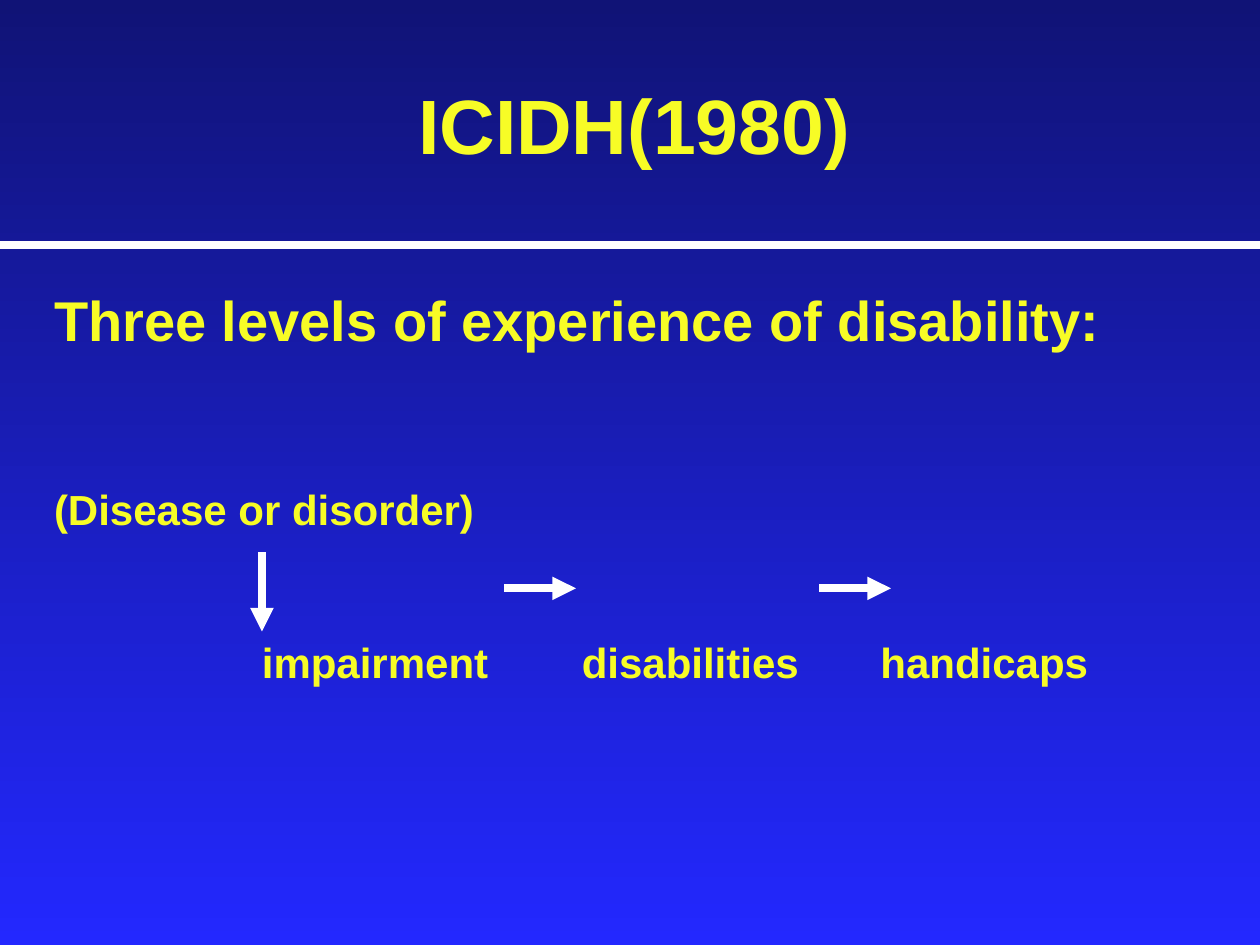
from collections import namedtuple

from lxml.etree import SubElement
from pptx import Presentation
from pptx.dml.color import RGBColor
from pptx.enum.shapes import MSO_CONNECTOR as Connector
from pptx.enum.text import MSO_ANCHOR as Anchor, PP_ALIGN as Align
from pptx.oxml.ns import qn
from pptx.util import Cm, Pt

NAVY = RGBColor(0x10, 0x13, 0x76)
BLUE = RGBColor(0x23, 0x28, 0xFF)
YELLOW = RGBColor(0xF7, 0xFC, 0x26)
WHITE = RGBColor(0xFF, 0xFF, 0xFF)
FONT = "Arial"

# Lengths in centimetres
Box = namedtuple("Box", "left top width height")
PAGE = Box(0, 0, 25.4, 19.05)
TITLE = Box(1.5, 0.9, 22.58, 3.18)
BODY = Box(0.84, 5.64, 24.56, 12.45)
RULE_TOP = 4.93


def paint_background(slide):
    fill = slide.background.fill
    fill.gradient()
    fill.gradient_angle = 270
    for stop, color, position in zip(fill.gradient_stops, (NAVY, BLUE), (0, 1)):
        stop.color.rgb = color
        stop.position = position


def add_frame(slide, box, anchor=Anchor.TOP):
    frame = slide.shapes.add_textbox(*map(Cm, box)).text_frame
    frame.word_wrap = True
    frame.vertical_anchor = anchor
    return frame


def write(para, text, size=24, align=Align.LEFT, before=0, tabs=()):
    if tabs:
        tab_list = SubElement(para._p.get_or_add_pPr(), qn("a:tabLst"))
        for position in tabs:
            SubElement(tab_list, qn("a:tab"), pos=str(Cm(position)), algn="l")
    para.alignment = align
    para.space_before = Pt(before)
    span = para.add_run()
    span.text = text
    font = span.font
    font.name, font.size, font.bold = FONT, Pt(size), True
    font.color.rgb = YELLOW


def add_line(slide, start, end, arrow=False):
    line = slide.shapes.add_connector(Connector.STRAIGHT, *map(Cm, start + end))
    line.line.color.rgb = WHITE
    line.line.width = Pt(4.5)
    if arrow:
        SubElement(line.line._get_or_add_ln(), qn("a:tailEnd"), type="triangle")
    SubElement(line._element.spPr, qn("a:effectLst"))


def add_title(slide, box):
    frame = add_frame(slide, box, Anchor.MIDDLE)
    write(frame.paragraphs[0], "ICIDH(1980)", size=44, align=Align.CENTER)


def add_levels(slide, box):
    # Heading, cause and the row of three levels
    frame = add_frame(slide, box)
    write(frame.paragraphs[0], "Three levels of experience of disability:", size=32)
    write(frame.add_paragraph(), "(Disease or disorder)", before=74.4)
    write(frame.add_paragraph(), "\timpairment\tdisabilities\thandicaps",
          before=58.7, tabs=(4.19, 10.64, 16.66))

    # Arrows from the cause down to the first level, then from level to level
    down_x, down_y = box.left + 4.44, box.top + 5.49
    add_line(slide, (down_x, down_y), (down_x, down_y + 1.6), arrow=True)
    across_y = box.top + 6.22
    for offset in (9.32, 15.67):
        across_x = box.left + offset
        add_line(slide, (across_x, across_y), (across_x + 1.45, across_y), arrow=True)


def main():
    deck = Presentation()
    deck.slide_width, deck.slide_height = Cm(PAGE.width), Cm(PAGE.height)
    slide = deck.slides.add_slide(deck.slide_layouts[6])
    paint_background(slide)
    add_title(slide, TITLE)
    add_line(slide, (PAGE.left, RULE_TOP), (PAGE.width, RULE_TOP))
    add_levels(slide, BODY)
    deck.save("out.pptx")


if __name__ == "__main__":
    main()
